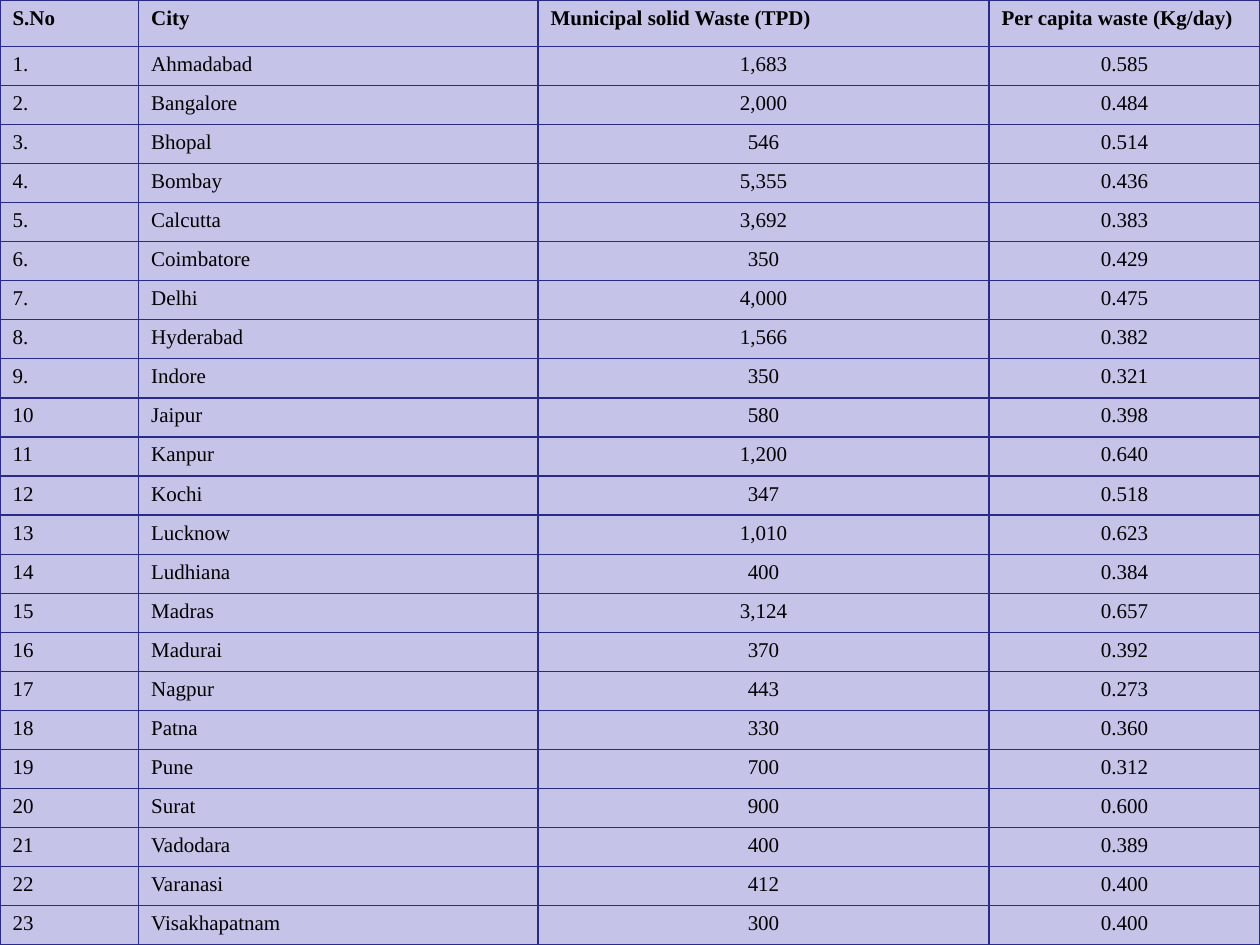
from dataclasses import dataclass

from lxml.etree import SubElement
from pptx import Presentation
from pptx.dml.color import RGBColor
from pptx.enum.text import PP_ALIGN
from pptx.oxml.ns import qn
from pptx.util import Inches, Pt


@dataclass(frozen=True)
class Theme:
    font: str = "Times New Roman"
    size: float = 12
    ink: str = "000000"
    fill: str = "C5C4E8"
    line: str = "2A2A89"
    rule: float = 0.75


THEME = Theme()
WIDTH, HEIGHT = 10, 7.5
HEAD_HEIGHT = 0.37
COLS = (1.1, 3.17, 3.58, 2.15)
HEADS = ("S.No", "City", "Municipal solid Waste (TPD)", "Per capita waste (Kg/day)")

# City, municipal solid waste, per capita waste
CITIES = (
    ("Ahmadabad", "1,683", "0.585"),
    ("Bangalore", "2,000", "0.484"),
    ("Bhopal", "546", "0.514"),
    ("Bombay", "5,355", "0.436"),
    ("Calcutta", "3,692", "0.383"),
    ("Coimbatore", "350", "0.429"),
    ("Delhi", "4,000", "0.475"),
    ("Hyderabad", "1,566", "0.382"),
    ("Indore", "350", "0.321"),
    ("Jaipur", "580", "0.398"),
    ("Kanpur", "1,200", "0.640"),
    ("Kochi", "347", "0.518"),
    ("Lucknow", "1,010", "0.623"),
    ("Ludhiana", "400", "0.384"),
    ("Madras", "3,124", "0.657"),
    ("Madurai", "370", "0.392"),
    ("Nagpur", "443", "0.273"),
    ("Patna", "330", "0.360"),
    ("Pune", "700", "0.312"),
    ("Surat", "900", "0.600"),
    ("Vadodara", "400", "0.389"),
    ("Varanasi", "412", "0.400"),
    ("Visakhapatnam", "300", "0.400"),
)


def set_all(target, values):
    for name, value in values.items():
        setattr(target, name, value)


def add_rules(cell):
    """Draw all four borders; they must come before the cell fill."""
    props = cell._tc.get_or_add_tcPr()
    for side in ("a:lnL", "a:lnR", "a:lnT", "a:lnB"):
        line = SubElement(props, qn(side), w=str(Pt(THEME.rule)))
        solid = SubElement(line, qn("a:solidFill"))
        SubElement(solid, qn("a:srgbClr"), val=THEME.line)


def fill_cell(cell, text, bold, align):
    add_rules(cell)
    cell.fill.solid()
    cell.fill.fore_color.rgb = RGBColor.from_string(THEME.fill)
    para = cell.text_frame.paragraphs[0]
    para.alignment = align
    run = para.add_run()
    run.text = text
    set_all(run.font, {"name": THEME.font, "size": Pt(THEME.size), "bold": bold})
    run.font.color.rgb = RGBColor.from_string(THEME.ink)


def number(index):
    return f"{index}." if index < 10 else str(index)


def add_grid(slide):
    rows = [HEADS] + [(number(i), *city) for i, city in enumerate(CITIES, 1)]
    frame = slide.shapes.add_table(
        len(rows), len(COLS), Inches(0), Inches(0), Inches(WIDTH), Inches(HEIGHT)
    )
    table = frame.table
    set_all(table, {"first_row": False, "horz_banding": False})
    for col, width in zip(table.columns, COLS):
        col.width = Inches(width)

    # City rows share the height left below the header
    step = (HEIGHT - HEAD_HEIGHT) / len(CITIES)
    for r, texts in enumerate(rows):
        head = r == 0
        table.rows[r].height = Inches(HEAD_HEIGHT if head else step)
        for c, text in enumerate(texts):
            middle = c > 1 and not head
            align = PP_ALIGN.CENTER if middle else PP_ALIGN.LEFT
            fill_cell(table.cell(r, c), text, head, align)


def main():
    deck = Presentation()
    set_all(deck, {"slide_width": Inches(WIDTH), "slide_height": Inches(HEIGHT)})
    # The table fills the slide, so the blank layout is used
    slide = deck.slides.add_slide(deck.slide_layouts[6])
    add_grid(slide)
    deck.save("out.pptx")


if __name__ == "__main__":
    main()
